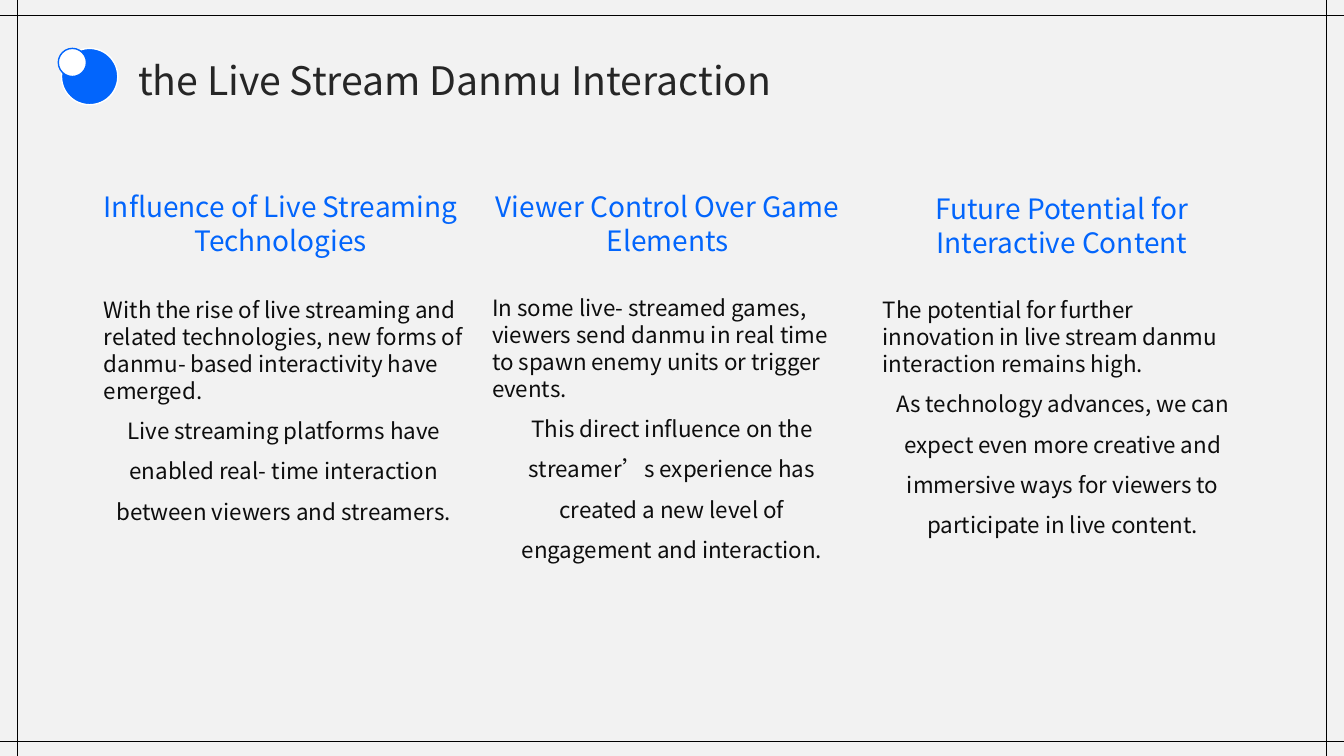
from dataclasses import dataclass

from lxml import etree
from pptx import Presentation
from pptx.dml.color import RGBColor
from pptx.enum.shapes import MSO_CONNECTOR, MSO_SHAPE
from pptx.enum.text import MSO_ANCHOR, MSO_AUTO_SIZE, PP_ALIGN
from pptx.oxml.ns import qn
from pptx.util import Cm, Pt

LEFT, CENTER = PP_ALIGN.LEFT, PP_ALIGN.CENTER
STRAIGHT, OVAL = MSO_CONNECTOR.STRAIGHT, MSO_SHAPE.OVAL


@dataclass(frozen=True)
class Theme:
    font: str = "Noto Sans CJK SC"
    paper: RGBColor = RGBColor(0xF2, 0xF2, 0xF2)
    white: RGBColor = RGBColor(0xFF, 0xFF, 0xFF)
    black: RGBColor = RGBColor(0, 0, 0)
    accent: RGBColor = RGBColor(0x02, 0x65, 0xFC)
    title: RGBColor = RGBColor(0x26, 0x26, 0x26)
    body: RGBColor = RGBColor(0x0D, 0x0D, 0x0D)
    title_size: Pt = Pt(28)
    heading_size: Pt = Pt(20)
    body_size: Pt = Pt(16)


THEME = Theme()


def prepare_frame(sp, anchor):
    """Remove the insets, turn wrapping on and return the text frame."""
    tf = sp.text_frame
    tf.margin_left = tf.margin_right = tf.margin_top = tf.margin_bottom = 0
    tf.word_wrap = True
    tf.auto_size = MSO_AUTO_SIZE.NONE
    tf.vertical_anchor = anchor
    return tf


def write_paragraph(p, text, size, color, align, spacing):
    p.text = text
    p.alignment = align
    p.line_spacing = spacing
    p.space_before = Pt(0)
    p.font.name = THEME.font
    p.font.size = size
    p.font.bold = False
    p.font.color.rgb = color


prs = Presentation()
prs.slide_width, prs.slide_height = Cm(33.87), Cm(19.05)
slide = prs.slides.add_slide(prs.slide_layouts[5])
slide.background.fill.solid()
slide.background.fill.fore_color.rgb = THEME.paper

# Frame lines
width, height = 33.87, 19.05
inset_x, inset_y = 0.45, 0.38
frame_lines = [
    (width, inset_y, 0, inset_y),
    (width - inset_x, 0, width - inset_x, height),
    (width, height - inset_y, 0, height - inset_y),
    (inset_x, height, inset_x, 0),
]
for ends in frame_lines:
    line = slide.shapes.add_connector(STRAIGHT, *[Cm(v) for v in ends])
    line.line.color.rgb = THEME.black
    line.line.width = Pt(0.5)
    etree.SubElement(line._element.spPr, qn("a:effectLst"))

# Three columns: left of heading, top of heading, left of body, top of body
columns = [
    (2.54, 4.78, 2.62, 7.47, "Influence of Live Streaming Technologies",
     "With the rise of live streaming and related technologies, new forms of "
     "danmu- based interactivity have emerged.",
     "Live streaming platforms have enabled real- time interaction between "
     "viewers and streamers."),
    (12.29, 4.78, 12.4, 7.42, "Viewer Control Over Game Elements",
     "In some live- streamed games, viewers send danmu in real time to spawn "
     "enemy units or trigger events.",
     "This direct influence on the streamer’s experience has created a new "
     "level of engagement and interaction."),
    (22.23, 4.83, 22.25, 7.47, "Future Potential for Interactive Content",
     "The potential for further innovation in live stream danmu interaction "
     "remains high.",
     "As technology advances, we can expect even more creative and immersive "
     "ways for viewers to participate in live content."),
]
column_width = Cm(9.07)
for head_x, head_y, body_x, body_y, heading, lead, detail in columns:
    sp = slide.shapes.add_textbox(Cm(head_x), Cm(head_y), column_width, Cm(0.76))
    tf = prepare_frame(sp, MSO_ANCHOR.TOP)
    write_paragraph(tf.paragraphs[0], heading, THEME.heading_size, THEME.accent, CENTER, 1.0)

    sp = slide.shapes.add_textbox(Cm(body_x), Cm(body_y), column_width, Cm(9.37))
    tf = prepare_frame(sp, MSO_ANCHOR.TOP)
    write_paragraph(tf.paragraphs[0], lead, THEME.body_size, THEME.body, LEFT, 1.0)
    write_paragraph(tf.add_paragraph(), detail, THEME.body_size, THEME.body, CENTER, 1.5)

# Title with its two-dot marker
title = slide.shapes.title
title.left, title.top, title.width, title.height = Cm(3.48), Cm(1.3), Cm(30.18), Cm(1.3)
tf = prepare_frame(title, MSO_ANCHOR.MIDDLE)
write_paragraph(tf.paragraphs[0], "the Live Stream Danmu Interaction",
                THEME.title_size, THEME.title, LEFT, 1.1)

dots = [
    (1.55, 1.42, THEME.accent, THEME.white),
    (1.47, 0.71, THEME.white, THEME.accent),
]
for x, diameter, fill, outline in dots:
    sp = slide.shapes.add_shape(OVAL, Cm(x), Cm(1.22), Cm(diameter), Cm(diameter))
    sp.shadow.inherit = False
    sp.fill.solid()
    sp.fill.fore_color.rgb = fill
    sp.line.color.rgb = outline
    sp.line.width = Pt(1)

prs.save("out.pptx")
